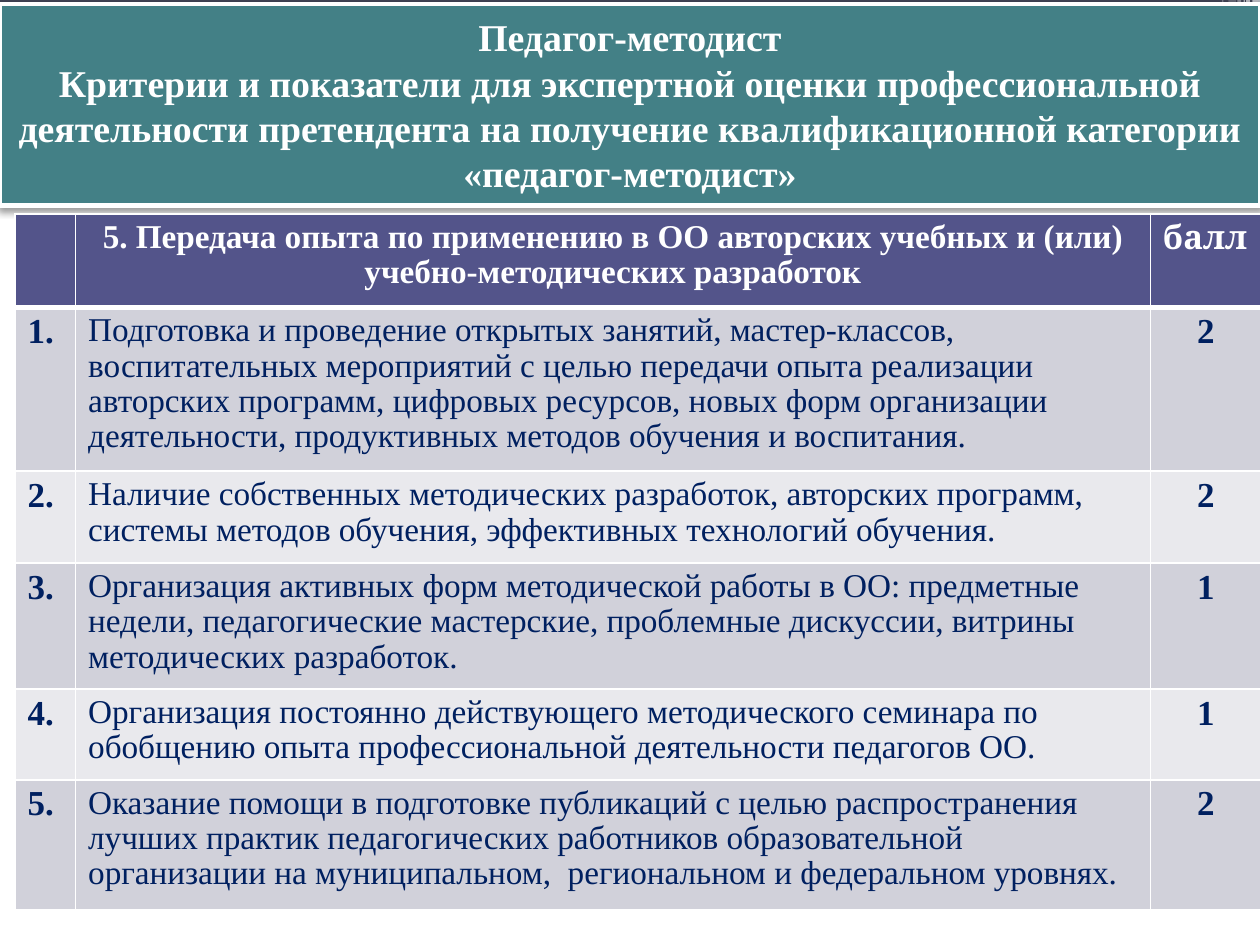
from lxml.etree import SubElement
from pptx import Presentation
from pptx.dml.color import RGBColor
from pptx.enum.shapes import MSO_SHAPE
from pptx.enum.text import MSO_ANCHOR, PP_ALIGN
from pptx.oxml import parse_xml
from pptx.oxml.ns import nsdecls, qn
from pptx.util import Inches, Pt

WHITE = RGBColor(0xFF, 0xFF, 0xFF)
TEAL = RGBColor(0x43, 0x80, 0x86)
SLATE = RGBColor(0x42, 0x44, 0x56)
VIOLET = RGBColor(0x53, 0x54, 0x8A)
NAVY = RGBColor(0x00, 0x20, 0x60)
BANDS = [RGBColor(0xD1, 0xD1, 0xDA), RGBColor(0xE9, 0xE9, 0xED)]

SERIF = "Times New Roman"
TITLE_FONT = {"name": SERIF, "size": Pt(21.6), "bold": True}
HEADER_FONT = {"name": SERIF, "size": Pt(19), "bold": True}
SCORE_HEADER_FONT = {"name": "Cambria", "size": Pt(19), "bold": True}
NUMBER_FONT = {"name": SERIF, "size": Pt(20), "bold": True}
CRITERION_FONT = {"name": SERIF, "size": Pt(19), "bold": False}

TITLE = (
    "Педагог-методист\vКритерии и показатели для экспертной оценки "
    "профессиональной деятельности претендента на получение "
    "квалификационной категории «педагог-методист»"
)
SECTION = (
    "5. Передача опыта по применению в ОО авторских учебных и (или) "
    "учебно-методических разработок"
)
CRITERIA = [
    ("Подготовка и проведение открытых занятий, мастер-классов, "
     "воспитательных мероприятий с целью передачи опыта реализации "
     "авторских программ, цифровых ресурсов, новых форм организации "
     "деятельности, продуктивных методов обучения и воспитания.", 2),
    ("Наличие собственных методических разработок, авторских программ, "
     "системы методов обучения, эффективных технологий обучения.", 2),
    ("Организация активных форм методической работы в ОО: предметные "
     "недели, педагогические мастерские, проблемные дискуссии, витрины "
     "методических разработок.", 1),
    ("Организация постоянно действующего методического семинара по "
     "обобщению опыта профессиональной деятельности педагогов ОО.", 1),
    ("Оказание помощи в подготовке публикаций с целью распространения "
     "лучших практик педагогических работников образовательной "
     "организации на муниципальном,  региональном и федеральном уровнях.", 2),
]
COLUMN_WIDTHS = [0.48, 8.53, 0.88]
ROW_HEIGHTS = [0.74, 1.3, 0.73, 1, 0.72, 1.03]
STRIPES = [
    (9.94, 0.06, 0.68, 65),
    (9.89, 0.03, 0.68, 65),
    (9.87, 0.01, 0.68, 60),
    (9.82, 0.03, 0.68, 40),
    (9.75, 0.06, 0.64, 20),
    (9.7, 0.01, 0.64, 30),
]


def format_text(paragraph, font_values, color, align):
    paragraph.alignment = align
    for run in paragraph.runs:
        for key, value in font_values.items():
            setattr(run.font, key, value)
        run.font.color.rgb = color


def add_bar(slide, left, width, height, color, opacity=100):
    bar = slide.shapes.add_shape(
        MSO_SHAPE.RECTANGLE, Inches(left), 0, Inches(width), Inches(height)
    )
    bar.shadow.inherit = False
    bar.fill.solid()
    bar.fill.fore_color.rgb = color
    bar.line.fill.background()
    if opacity < 100:
        tint = bar._element.spPr.find(".//" + qn("a:srgbClr"))
        SubElement(tint, qn("a:alpha"), val=str(opacity * 1000))


def add_title(slide):
    title = slide.shapes.title
    slide.shapes._spTree.append(title._element)
    place = {"left": 0, "top": 0.03, "width": 10, "height": 1.6}
    for key, value in place.items():
        setattr(title, key, Inches(value))
    title.fill.solid()
    title.fill.fore_color.rgb = TEAL
    title.line.color.rgb = WHITE
    title.line.width = Pt(2.5)
    title._element.spPr.append(parse_xml(
        f'<a:effectLst {nsdecls("a")}>'
        '<a:outerShdw blurRad="52000" dist="25400" dir="5400000" rotWithShape="0">'
        '<a:srgbClr val="000000"><a:alpha val="40000"/></a:srgbClr>'
        '</a:outerShdw></a:effectLst>'
    ))
    title.text_frame.text = TITLE
    title.text_frame.word_wrap = True
    title.text_frame.vertical_anchor = MSO_ANCHOR.MIDDLE
    format_text(title.text_frame.paragraphs[0], TITLE_FONT, WHITE, PP_ALIGN.CENTER)


def set_borders(cell, bottom_width):
    properties = cell._tc.get_or_add_tcPr()
    widths = {"a:lnL": 1, "a:lnR": 1, "a:lnT": 1, "a:lnB": bottom_width}
    for position, (tag, width) in enumerate(widths.items()):
        border = parse_xml(
            f'<{tag} {nsdecls("a")} w="{Pt(width)}"><a:solidFill>'
            f'<a:srgbClr val="{WHITE}"/></a:solidFill></{tag}>'
        )
        properties.insert(position, border)


def fill_cell(cell, text, font_values, color, align, background, bottom_width=1):
    cell.fill.solid()
    cell.fill.fore_color.rgb = background
    set_borders(cell, bottom_width)
    cell.text = text
    paragraph = cell.text_frame.paragraphs[0]
    paragraph.line_spacing = 0.96
    format_text(paragraph, font_values, color, align)


def add_criteria_table(slide):
    table = slide.shapes.add_table(
        len(ROW_HEIGHTS), len(COLUMN_WIDTHS), Inches(0.12), Inches(1.7),
        Inches(sum(COLUMN_WIDTHS)), Inches(sum(ROW_HEIGHTS))
    ).table
    for column, width in zip(table.columns, COLUMN_WIDTHS):
        column.width = Inches(width)
    for row, height in zip(table.rows, ROW_HEIGHTS):
        row.height = Inches(height)

    headers = [
        ("", HEADER_FONT, PP_ALIGN.LEFT),
        (SECTION, HEADER_FONT, PP_ALIGN.CENTER),
        ("балл", SCORE_HEADER_FONT, PP_ALIGN.LEFT),
    ]
    for column, (text, font_values, align) in enumerate(headers):
        fill_cell(table.cell(0, column), text, font_values, WHITE, align, VIOLET, 3)
    table.cell(0, 1).text_frame.paragraphs[0].space_after = Pt(10)

    for number, (criterion, score) in enumerate(CRITERIA, 1):
        entries = [
            (f"{number}.", NUMBER_FONT, PP_ALIGN.LEFT),
            (criterion, CRITERION_FONT, PP_ALIGN.LEFT),
            (str(score), NUMBER_FONT, PP_ALIGN.CENTER),
        ]
        band = BANDS[(number - 1) % 2]
        for column, (text, font_values, align) in enumerate(entries):
            fill_cell(table.cell(number, column), text, font_values, NAVY, align, band)


def main():
    presentation = Presentation()
    presentation.slide_width = Inches(10)
    presentation.slide_height = Inches(7.5)
    slide = presentation.slides.add_slide(presentation.slide_layouts[5])
    add_bar(slide, 0, 10, 0.34, SLATE)
    for left, width, height, opacity in STRIPES:
        add_bar(slide, left, width, height, WHITE, opacity)
    add_title(slide)
    add_criteria_table(slide)
    presentation.save("out.pptx")


if __name__ == "__main__":
    main()
